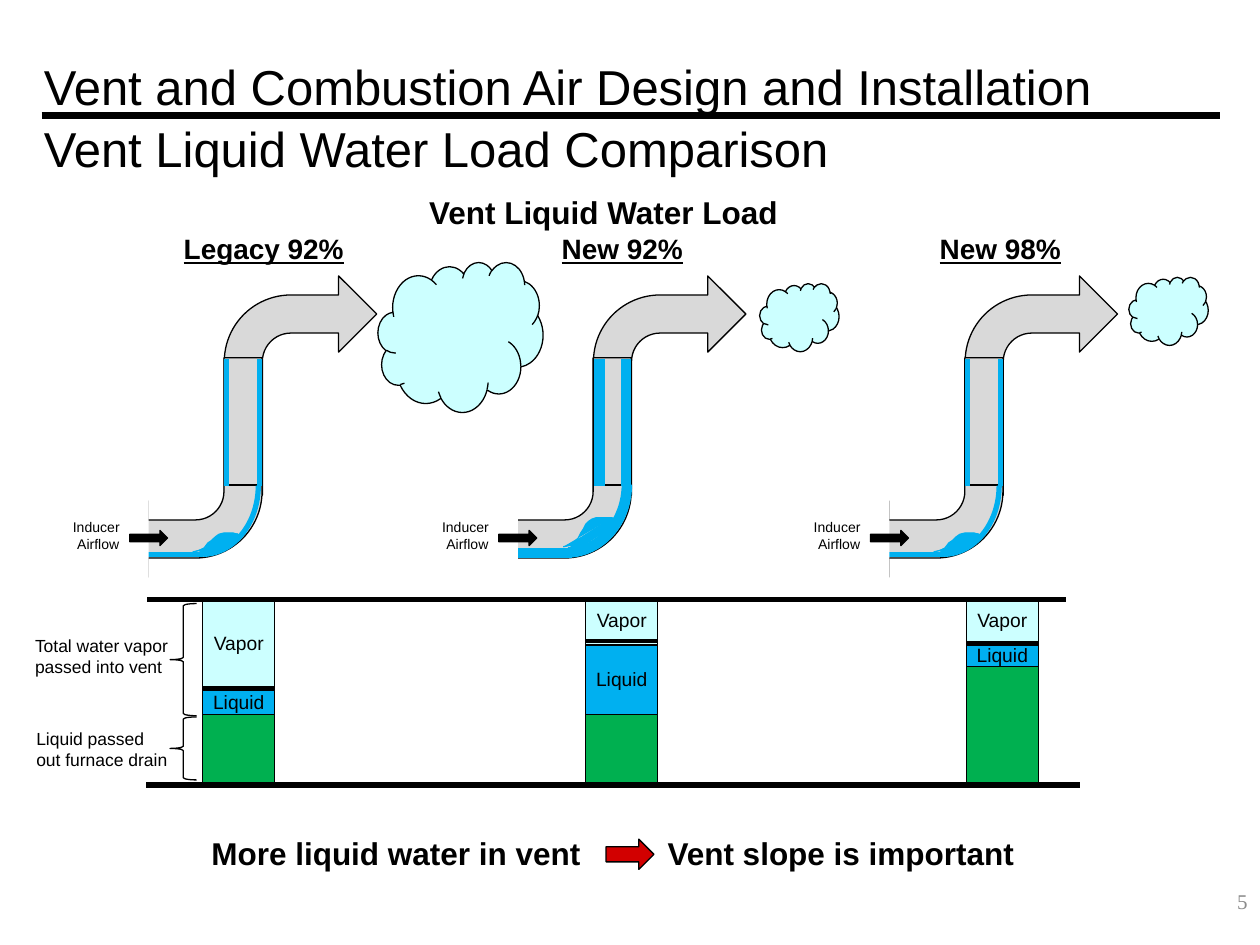
from lxml.etree import SubElement
from pptx import Presentation
from pptx.dml.color import RGBColor
from pptx.enum.shapes import MSO_CONNECTOR, MSO_SHAPE
from pptx.enum.text import MSO_ANCHOR, PP_ALIGN
from pptx.oxml.ns import qn
from pptx.util import Inches, Pt

BLACK = RGBColor(0x00, 0x00, 0x00)
WHITE = RGBColor(0xFF, 0xFF, 0xFF)
PIPE_GRAY = RGBColor(0xD9, 0xD9, 0xD9)
PAGE_GRAY = RGBColor(0x8C, 0x8C, 0x8C)
VAPOR = RGBColor(0xCC, 0xFF, 0xFF)
LIQUID = RGBColor(0x00, 0xB0, 0xF0)
DRAIN = RGBColor(0x00, 0xB0, 0x50)
RED = RGBColor(0xD2, 0x00, 0x00)

BAR_TOP, BAR_BOTTOM, BAR_WIDTH = 4.76, 6.23, 0.57

# Pool outlines: x from the riser's left side, y on the slide
THIN_POOL = [(-0.25, 4.38), (-0.2, 4.37), (-0.16, 4.35), (-0.13, 4.31), (-0.1, 4.29),
             (-0.07, 4.26), (-0.04, 4.24), (0, 4.23), (0.07, 4.23), (0.13, 4.25)]
THICK_POOL = [(-0.24, 4.34), (-0.19, 4.33), (-0.15, 4.3), (-0.12, 4.27), (-0.1, 4.23),
              (-0.08, 4.2), (-0.06, 4.16), (-0.04, 4.14), (-0.01, 4.12), (0.02, 4.11),
              (0.15, 4.11)]


def style(shape, fill=None, line=BLACK, weight=0.75):
    shape.shadow.inherit = False
    if fill is None:
        shape.fill.background()
    else:
        shape.fill.solid()
        shape.fill.fore_color.rgb = fill
    if line is None:
        shape.line.fill.background()
    else:
        shape.line.color.rgb = line
        shape.line.width = Pt(weight)


def add_shape(page, kind, left, top, width, height, fill=None, line=BLACK,
              weight=0.75, rotation=0):
    shape = page.shapes.add_shape(kind, Inches(left), Inches(top), Inches(width), Inches(height))
    style(shape, fill, line, weight)
    shape.rotation = rotation
    return shape


def add_line(page, x1, y1, x2, y2, color=BLACK, weight=0.75):
    line = page.shapes.add_connector(
        MSO_CONNECTOR.STRAIGHT, Inches(x1), Inches(y1), Inches(x2), Inches(y2))
    line.line.color.rgb = color
    line.line.width = Pt(weight)
    SubElement(line._element.spPr, qn("a:effectLst"))


def add_text(page, text, left, top, width, height, size, align=PP_ALIGN.LEFT,
             bold=False, wrap=True, color=BLACK, font="Arial"):
    box = page.shapes.add_textbox(Inches(left), Inches(top), Inches(width), Inches(height))
    box.text_frame.word_wrap = wrap
    box.text_frame.text = text
    for para in box.text_frame.paragraphs:
        para.alignment = align
        for span in para.runs:
            span.font.size = Pt(size)
            span.font.bold = bold
            span.font.name = font
            span.font.color.rgb = color
    return box


def set_tabs(para, positions):
    tabs = SubElement(para._p.get_or_add_pPr(), qn("a:tabLst"))
    for position in positions:
        SubElement(tabs, qn("a:tab"), pos=str(Inches(position)), algn="l")


def add_headings(page):
    title = add_text(page, "Vent and Combustion Air Design and Installation\v"
                     "Vent Liquid Water Load Comparison", 0.25, 0.33, 9.42, 1.17, 28)
    title.text_frame.vertical_anchor = MSO_ANCHOR.MIDDLE
    title.text_frame.paragraphs[0].line_spacing = 1.05
    add_line(page, 0.33, 0.92, 9.68, 0.92, weight=4)
    add_text(page, "Vent Liquid Water Load", 3.29, 1.48, 3, 0.4, 18,
             PP_ALIGN.CENTER, bold=True, wrap=False)

    names = add_text(page, "", 1.36, 1.79, 8.21, 0.37, 16)
    para = names.text_frame.paragraphs[0]
    set_tabs(para, [3, 6])
    for text in ("Legacy 92%", "\t", "New 92%", "\t", "New 98%"):
        span = para.add_run()
        span.text = text
        span.font.size = Pt(16)
        span.font.name = "Arial"
        span.font.bold = True
        span.font.underline = text != "\t"
        span.font.color.rgb = BLACK


def add_pipe(page, x):
    """Draw an outlet and an inlet elbow, x being the riser's left side."""
    add_shape(page, MSO_SHAPE.BENT_ARROW, x, 2.19, 1.21, 1.74, PIPE_GRAY)
    add_shape(page, MSO_SHAPE.BENT_ARROW, x - 0.91, 2.84, 1.21, 1.74, PIPE_GRAY, rotation=180)
    add_line(page, x, 3.85, x + 0.29, 3.85)


def add_water(page, x, films, weight, arc_box, floor, pool, ramp):
    """Draw wall films, elbow film, floor film and pool of one pipe."""
    for offset in films:
        add_line(page, x + offset, 2.85, x + offset, 3.86, LIQUID, weight)
    left, *arc_size = arc_box
    arc = add_shape(page, MSO_SHAPE.ARC, x + left, *arc_size,
                    line=LIQUID, weight=weight, rotation=90)
    arc.adjustments[0] = 162
    arc.adjustments[1] = 215.36
    add_line(page, x - 0.61, floor, x - 0.17, floor, LIQUID, weight)

    points = [(Inches(x + dx), Inches(y)) for dx, y in pool]
    outline = page.shapes.build_freeform(*points[0], scale=1.0)
    outline.add_line_segments(points[1:], close=False)
    style(outline.convert_to_shape(), LIQUID, LIQUID)
    left, top, width, height, rotation = ramp
    add_shape(page, MSO_SHAPE.ROUNDED_RECTANGLE, x + left, top, width, height,
              LIQUID, LIQUID, rotation=rotation)


def add_inlet(page, x):
    add_shape(page, MSO_SHAPE.RECTANGLE, x - 1.01, 3.93, 0.41, 0.7, WHITE, None)
    add_shape(page, MSO_SHAPE.RIGHT_ARROW, x - 0.75, 4.21, 0.3, 0.12, BLACK)
    add_text(page, "Inducer \nAirflow", x - 1.34, 4.07, 0.68, 0.37, 8, PP_ALIGN.CENTER)


def add_bar(page, x, divider, liquid_top, drain_top):
    def block(top, bottom, fill):
        add_shape(page, MSO_SHAPE.RECTANGLE, x, top, BAR_WIDTH, bottom - top, fill)

    def label(text, top, bottom):
        add_text(page, text, x - 0.02, (top + bottom) / 2 - 0.15, BAR_WIDTH + 0.04, 0.29, 11,
                 PP_ALIGN.CENTER, wrap=False)

    block(drain_top, BAR_BOTTOM, DRAIN)
    block(BAR_TOP, drain_top, VAPOR)
    block(liquid_top, drain_top, LIQUID)
    add_line(page, x, divider, x + BAR_WIDTH, divider, weight=2.25)
    label("Vapor", BAR_TOP, divider)
    label("Liquid", liquid_top, drain_top)


def add_conclusion(page):
    box = add_text(page, "More liquid water in vent\tVent slope is important",
                   1.58, 6.57, 6.64, 0.4, 18, bold=True, wrap=False)
    set_tabs(box.text_frame.paragraphs[0], [3.62])
    add_shape(page, MSO_SHAPE.DOWN_ARROW, 4.88, 6.59, 0.24, 0.38, RED, rotation=270)


def main():
    deck = Presentation()
    deck.slide_width, deck.slide_height = Inches(10), Inches(7.5)
    page = deck.slides.add_slide(deck.slide_layouts[6])
    add_headings(page)

    thin = ((0.02, 0.28), 3, (-0.72, 3.41, 1.09, 0.89), 4.4, THIN_POOL,
            (-0.2, 4.3, 0.33, 0.05, 335.5))
    thick = ((0.05, 0.26), 6, (-0.75, 3.37, 1.08, 0.95), 4.39, THICK_POOL,
             (-0.2, 4.21, 0.4, 0.06, 327.2))
    small = (0.63, 0.54)
    vents = [
        (1.78, thin, (3, 2.08, 1.31, 1.19)),
        (4.71, thick, (6.03, 2.25, *small)),
        (7.66, thin, (8.96, 2.2, *small)),
    ]
    for x, water, cloud in vents:
        add_shape(page, MSO_SHAPE.CLOUD, *cloud, VAPOR)
        add_pipe(page, x)
        add_water(page, x, *water)
        add_inlet(page, x)

    for bar in ((1.61, 5.46, 5.48, 5.67), (4.65, 5.09, 5.12, 5.67), (7.67, 5.1, 5.12, 5.29)):
        add_bar(page, *bar)
    add_line(page, 1.17, BAR_TOP, 8.46, BAR_TOP, weight=3)
    add_line(page, 1.16, BAR_BOTTOM, 8.57, BAR_BOTTOM, weight=3)

    add_shape(page, MSO_SHAPE.LEFT_BRACE, 1.35, 4.79, 0.21, 0.89)
    add_text(page, "Total water vapor passed into vent", 0.18, 4.99, 1.3, 0.44, 10)
    add_shape(page, MSO_SHAPE.LEFT_BRACE, 1.35, 5.69, 0.21, 0.5)
    add_text(page, "Liquid passed out furnace drain", 0.19, 5.73, 1.27, 0.44, 10)

    add_conclusion(page)
    add_text(page, "5", 7.92, 7, 2.08, 0.5, 12, PP_ALIGN.RIGHT,
             color=PAGE_GRAY, font="Times New Roman")
    deck.save("out.pptx")


if __name__ == "__main__":
    main()
